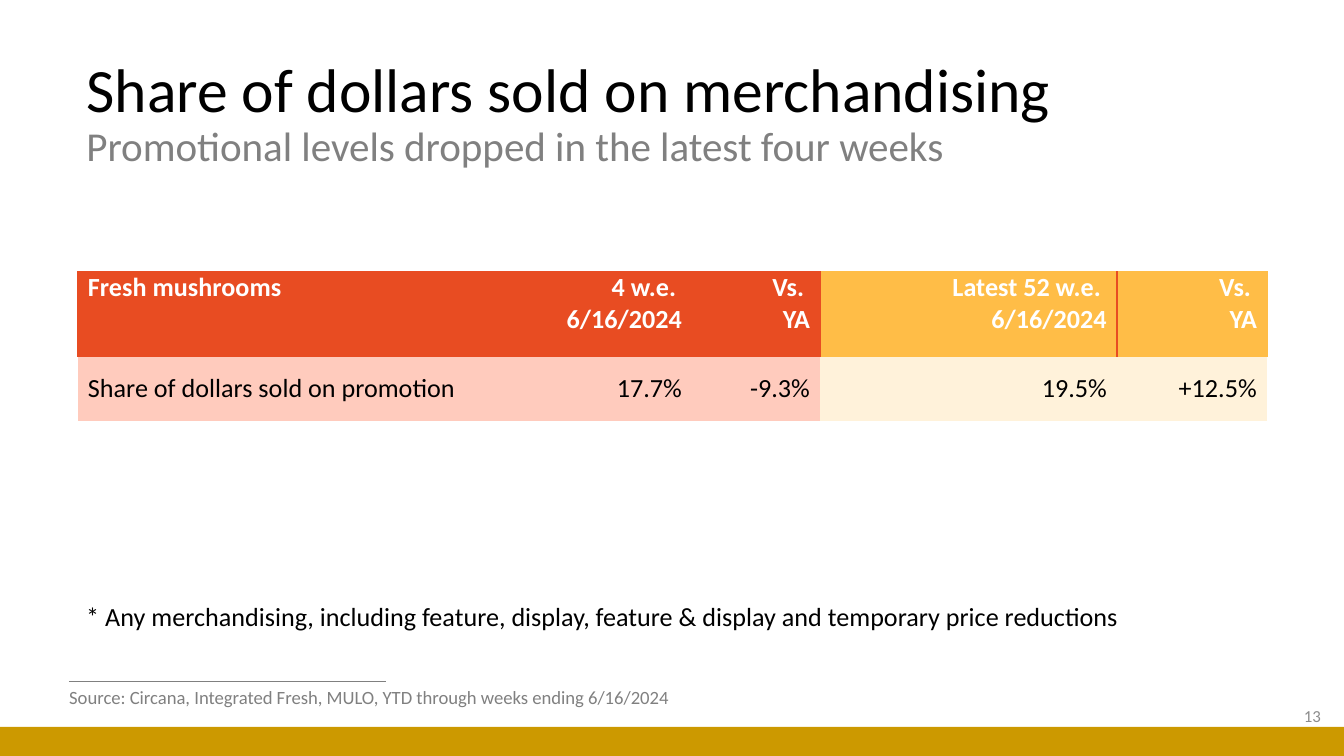
import pptx
import pptx.util
import pptx.dml.color
import pptx.enum.shapes
import pptx.enum.text
import pptx.oxml
import lxml.etree

SCALE = 9144000 / 1344
NS = "http://schemas.openxmlformats.org/drawingml/2006/main"
NO_STYLE = "{2D5ABB26-0587-4C30-8999-92F81FD0307C}"
ALIGN = pptx.enum.text.PP_ALIGN
ANCHOR = pptx.enum.text.MSO_ANCHOR
COLORS = {
    "black": "000000", "white": "FFFFFF", "gray": "808080", "number": "8C8C8C",
    "band": "CC9900", "red": "E84C22", "amber": "FFBD47",
    "pale red": "FFCBBD", "pale amber": "FFF2DA",
}


def px(*lengths):
    return [pptx.util.Emu(round(length * SCALE)) for length in lengths]


def style(font, size, color, bold=False):
    font.name = "Calibri"
    font.size = pptx.util.Pt(size)
    font.bold = bold
    font.color.rgb = pptx.dml.color.RGBColor.from_string(COLORS[color])


deck = pptx.Presentation()
deck.slide_width, deck.slide_height = px(1344, 756)
slide = deck.slides.add_slide(deck.slide_layouts[5])

source_rule = slide.shapes.add_connector(
    pptx.enum.shapes.MSO_CONNECTOR.STRAIGHT, *px(69, 682, 386, 682))
source_rule.line.color.rgb = pptx.dml.color.RGBColor.from_string(COLORS["gray"])
source_rule.line.width = pptx.util.Pt(0.5)
lxml.etree.SubElement(source_rule._element.spPr, f"{{{NS}}}effectLst")

footer_band = slide.shapes.add_shape(
    pptx.enum.shapes.MSO_SHAPE.RECTANGLE, *px(0, 727, 1344, 29))
footer_band.shadow.inherit = False
footer_band.fill.solid()
footer_band.fill.fore_color.rgb = pptx.dml.color.RGBColor.from_string(COLORS["band"])
footer_band.line.fill.background()

title = slide.shapes.title
title.left, title.top, title.width, title.height = px(73, 42, 1149, 146)
title.text_frame.vertical_anchor = ANCHOR.MIDDLE
title.text_frame.auto_size = pptx.enum.text.MSO_AUTO_SIZE.NONE
heading = title.text_frame.paragraphs[0]
heading.alignment = ALIGN.LEFT
heading.line_spacing = 0.9
headline = heading.add_run()
headline.text = "Share of dollars sold on merchandising"
style(headline.font, 33, "black")
heading.add_line_break()
subtitle = heading.add_run()
subtitle.text = "Promotional levels dropped in the latest four weeks"
style(subtitle.font, 22, "gray")

notes = [
    ("13", (1032, 695, 302, 41), 9, "number", ALIGN.RIGHT, ANCHOR.MIDDLE, True),
    ("Source: Circana, Integrated Fresh, MULO, YTD through weeks ending 6/16/2024",
     (56, 679, 646, 36), 10, "gray", ALIGN.LEFT, ANCHOR.TOP, False),
    ("* Any merchandising, including feature, display, feature & display and "
     "temporary price reductions",
     (73, 594, 1089, 46), 14, "black", ALIGN.LEFT, ANCHOR.TOP, False),
]
for words, place, size, color, align, anchor, wrap in notes:
    note = slide.shapes.add_textbox(*px(*place)).text_frame
    note.word_wrap = wrap
    note.vertical_anchor = anchor
    note.text = words
    note.paragraphs[0].alignment = align
    style(note.paragraphs[0].font, size, color)

rows = [
    ["Fresh mushrooms", "4 w.e. \n6/16/2024", "Vs. \nYA",
     "Latest 52 w.e. \n6/16/2024", "Vs. \nYA"],
    ["Share of dollars sold on promotion", "17.7%", "-9.3%", "19.5%", "+12.5%"],
]
row_fills = [["red"] * 3 + ["amber"] * 2, ["pale red"] * 3 + ["pale amber"] * 2]
header_borders = [
    {"L": "red", "R": "red", "T": "red"},
    {"L": "red", "R": "red", "T": "red"},
    {"L": "red", "R": "red", "T": "red"},
    {"L": "red", "R": "red", "T": "amber"},
    {"L": "red", "R": "amber", "T": "amber"},
]
promotion = slide.shapes.add_table(2, 5, *px(78, 272, 1189, 149)).table
promotion.first_row = promotion.horz_banding = False
promotion._tbl.tblPr.find(f"{{{NS}}}tableStyleId").text = NO_STYLE
for column, width in zip(promotion.columns, px(403, 211, 128, 297, 150)):
    column.width = width
for row, height in zip(promotion.rows, px(85, 64)):
    row.height = height

for r, texts in enumerate(rows):
    for c, words in enumerate(texts):
        cell = promotion.cell(r, c)
        cell.margin_left, cell.margin_right = px(10, 10)
        cell.margin_top = cell.margin_bottom = 0
        cell.vertical_anchor = ANCHOR.MIDDLE if r else ANCHOR.TOP
        if r == 0:
            for side, color in header_borders[c].items():
                cell._tc.get_or_add_tcPr().append(pptx.oxml.parse_xml(
                    f'<a:ln{side} xmlns:a="{NS}" w="12700"><a:solidFill>'
                    f'<a:srgbClr val="{COLORS[color]}"/></a:solidFill></a:ln{side}>'))
        cell.fill.solid()
        cell.fill.fore_color.rgb = pptx.dml.color.RGBColor.from_string(
            COLORS[row_fills[r][c]])
        cell.text = words
        for paragraph in cell.text_frame.paragraphs:
            paragraph.alignment = ALIGN.RIGHT if c else ALIGN.LEFT
            style(paragraph.font, 14, "black" if r else "white", bold=r == 0)

deck.save("out.pptx")
